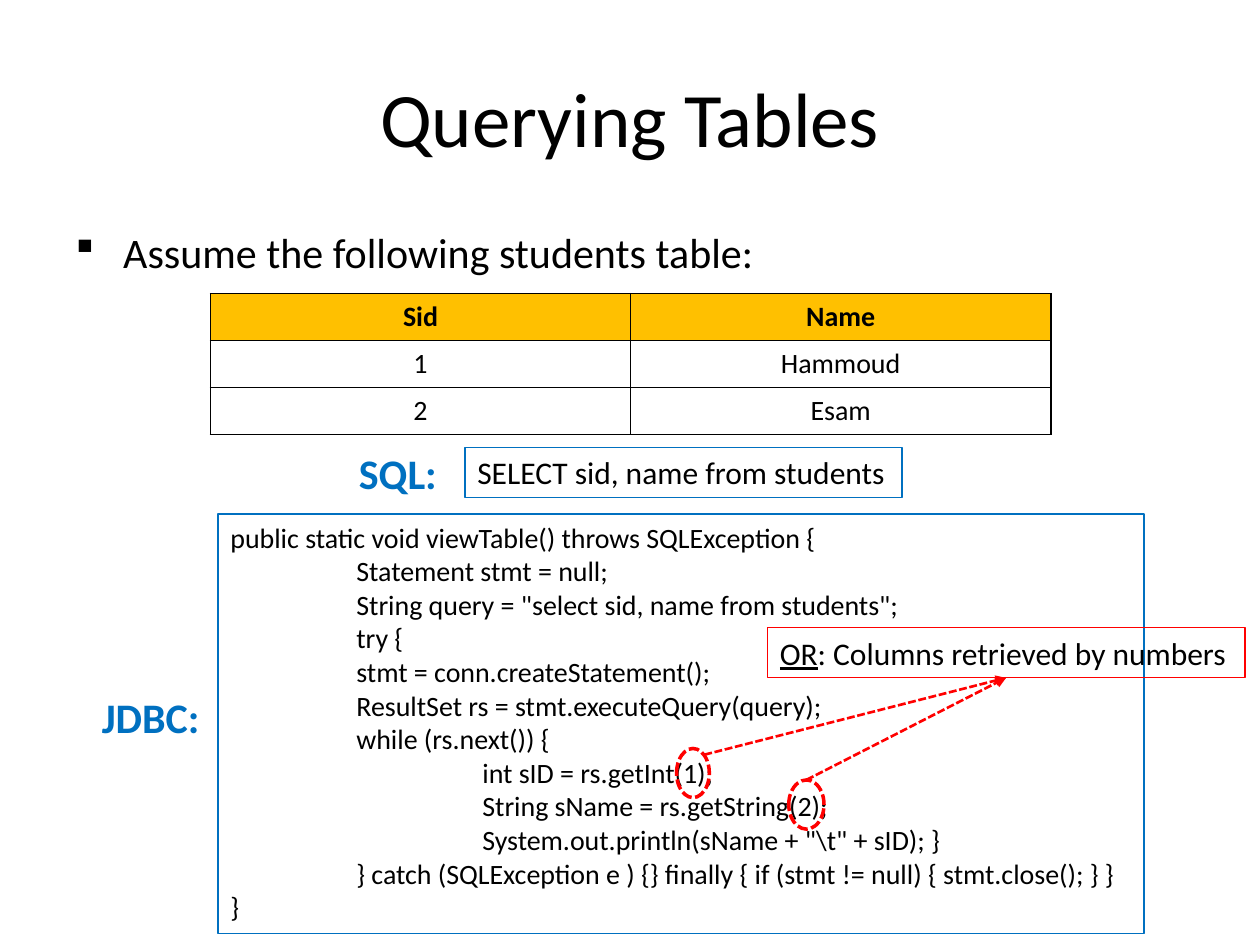
from lxml import etree
from pptx import Presentation
from pptx.dml.color import RGBColor
from pptx.enum.dml import MSO_LINE
from pptx.enum.shapes import MSO_CONNECTOR, MSO_SHAPE
from pptx.enum.text import MSO_ANCHOR, PP_ALIGN
from pptx.oxml.ns import qn
from pptx.util import Inches, Pt

RECT, OVAL = MSO_SHAPE.RECTANGLE, MSO_SHAPE.OVAL
STRAIGHT = MSO_CONNECTOR.STRAIGHT
DASH = MSO_LINE.SQUARE_DOT
LEFT, CENTER = PP_ALIGN.LEFT, PP_ALIGN.CENTER
TOP, MIDDLE = MSO_ANCHOR.TOP, MSO_ANCHOR.MIDDLE
FONT = "Calibri"
COLORS = {"black": "000000", "blue": "0070C0", "red": "FF0000",
          "header": "FFC000", "white": "FFFFFF"}

ROWS = [("Sid", "Name"), ("1", "Hammoud"), ("2", "Esam")]
CODE = [
    "public static void viewTable() throws SQLException {",
    "\tStatement stmt = null;",
    "\tString query = \"select sid, name from students\";",
    "\ttry {",
    "\tstmt = conn.createStatement();",
    "\tResultSet rs = stmt.executeQuery(query);",
    "\twhile (rs.next()) {",
    "\t\tint sID = rs.getInt(1);",
    "\t\tString sName = rs.getString(2);",
    "\t\tSystem.out.println(sName + \"\\t\" + sID); }",
    "\t} catch (SQLException e ) {} finally { if (stmt != null) { stmt.close(); } }",
    "}",
]


def rgb(name):
    """Return the named colour."""
    return RGBColor.from_string(COLORS[name])


def style(p, size, color="black", bold=False, align=LEFT):
    """Set the font and alignment of a paragraph."""
    p.alignment = align
    p.font.name = FONT
    p.font.size = Pt(size)
    p.font.bold = bold
    p.font.color.rgb = rgb(color)


def write(shape, lines, size, color="black", bold=False, align=LEFT, anchor=TOP, wrap=False):
    """Fill a shape with one paragraph per line."""
    tf = shape.text_frame
    tf.word_wrap = wrap
    tf.vertical_anchor = anchor
    for i, line in enumerate(lines):
        p = tf.paragraphs[0] if i == 0 else tf.add_paragraph()
        for j, text in enumerate(line if isinstance(line, tuple) else (line,)):
            r = p.add_run()
            r.text = text
            if isinstance(line, tuple):
                r.font.underline = j == 0
        style(p, size, color, bold, align)
    return shape


def add_text(s, box, text, size, **options):
    """Add a text box with one paragraph."""
    return write(s.shapes.add_textbox(*map(Inches, box)), [text], size, **options)


def add_outline(s, kind, box, color, width=0.75, dashed=False):
    """Add an unfilled shape with a coloured outline."""
    sp = s.shapes.add_shape(kind, *map(Inches, box))
    sp.shadow.inherit = False
    sp.fill.background()
    sp.line.color.rgb = rgb(color)
    sp.line.width = Pt(width)
    if dashed:
        sp.line.dash_style = DASH
    return sp


def add_bullet(p, char, font, indent):
    """Give a paragraph a hanging bullet."""
    pPr = p._p.get_or_add_pPr()
    pPr.set("marL", str(Inches(indent)))
    pPr.set("indent", str(-Inches(indent)))
    for tag, attrs in (("a:buFont", {"typeface": font, "charset": "2"}),
                       ("a:buChar", {"char": char})):
        pPr.insert_element_before(etree.Element(qn(tag), attrs),
                                  "a:tabLst", "a:defRPr", "a:extLst")


def add_tabs(p, stops):
    """Give a paragraph left tab stops."""
    tabs = etree.Element(qn("a:tabLst"))
    for stop in stops:
        etree.SubElement(tabs, qn("a:tab"), pos=str(Inches(stop)), algn="l")
    p._p.get_or_add_pPr().insert_element_before(tabs, "a:defRPr", "a:extLst")


def add_borders(cell, color, width):
    """Draw all four borders of a table cell."""
    tcPr = cell._tc.get_or_add_tcPr()
    for i, side in enumerate(("lnL", "lnR", "lnT", "lnB")):
        ln = etree.Element(qn(f"a:{side}"), w=str(Pt(width)))
        fill = etree.SubElement(ln, qn("a:solidFill"))
        etree.SubElement(fill, qn("a:srgbClr"), val=COLORS[color])
        tcPr.insert(i, ln)


def add_students(s, box):
    """Add the students table with a highlighted header row."""
    table = s.shapes.add_table(len(ROWS), len(ROWS[0]), *map(Inches, box)).table
    for i, row in enumerate(ROWS):
        for j, text in enumerate(row):
            cell = table.cell(i, j)
            cell.text = text
            cell.fill.solid()
            cell.fill.fore_color.rgb = rgb("white" if i else "header")
            style(cell.text_frame.paragraphs[0], 16, bold=i == 0, align=CENTER)
            add_borders(cell, "black", 1)


def add_arrow(s, start, target):
    """Add a dashed arrow from a point to the bottom of the target."""
    x, y = map(Inches, start)
    line = s.shapes.add_connector(STRAIGHT, x, y, x, y)
    line.end_connect(target, 2)
    line.line.color.rgb = rgb("red")
    line.line.width = Pt(1.5)
    line.line.dash_style = DASH
    etree.SubElement(line.line._get_or_add_ln(), qn("a:tailEnd"), type="triangle")
    etree.SubElement(line._element.spPr, qn("a:effectLst"))
    return line


def main():
    """Build the slide and save it."""
    prs = Presentation()
    prs.slide_width, prs.slide_height = Inches(10), Inches(7.5)
    s = prs.slides.add_slide(prs.slide_layouts[6])

    add_text(s, (0.5, 0.3, 9, 1.25), "Querying Tables", 44,
             align=CENTER, anchor=MIDDLE, wrap=True)
    body = add_text(s, (0.5, 1.75, 9, 5.42), "Assume the following students table:", 24, wrap=True)
    add_bullet(body.text_frame.paragraphs[0], "§", "Wingdings", 0.38)
    add_students(s, (1.67, 2.33, 6.67, 1.12))

    code = write(add_outline(s, RECT, (1.73, 4.08, 7.35, 3.33), "blue"), CODE, 16)
    for p in code.text_frame.paragraphs:
        add_tabs(p, (1, 2))
    write(add_outline(s, RECT, (3.69, 3.55, 3.47, 0.4), "blue"),
          ["SELECT sid, name from students"], 18)
    add_text(s, (2.75, 3.5, 0.83, 0.5), "SQL:", 24, color="blue", bold=True)
    add_text(s, (0.71, 5.44, 0.99, 0.5), "JDBC:", 24, color="blue", bold=True)

    add_outline(s, OVAL, (5.37, 5.94, 0.26, 0.39), "red", 2, True)
    second = add_outline(s, OVAL, (6.26, 6.19, 0.28, 0.39), "red", 2, True)
    note = write(add_outline(s, RECT, (6.09, 4.98, 3.79, 0.4), "red"),
                 [("OR", ": Columns retrieved by numbers")], 18)
    add_arrow(s, (5.59, 5.99), note)
    add_arrow(s, (6.4, 6.19), note).begin_connect(second, 0)

    prs.save("out.pptx")


if __name__ == "__main__":
    main()
